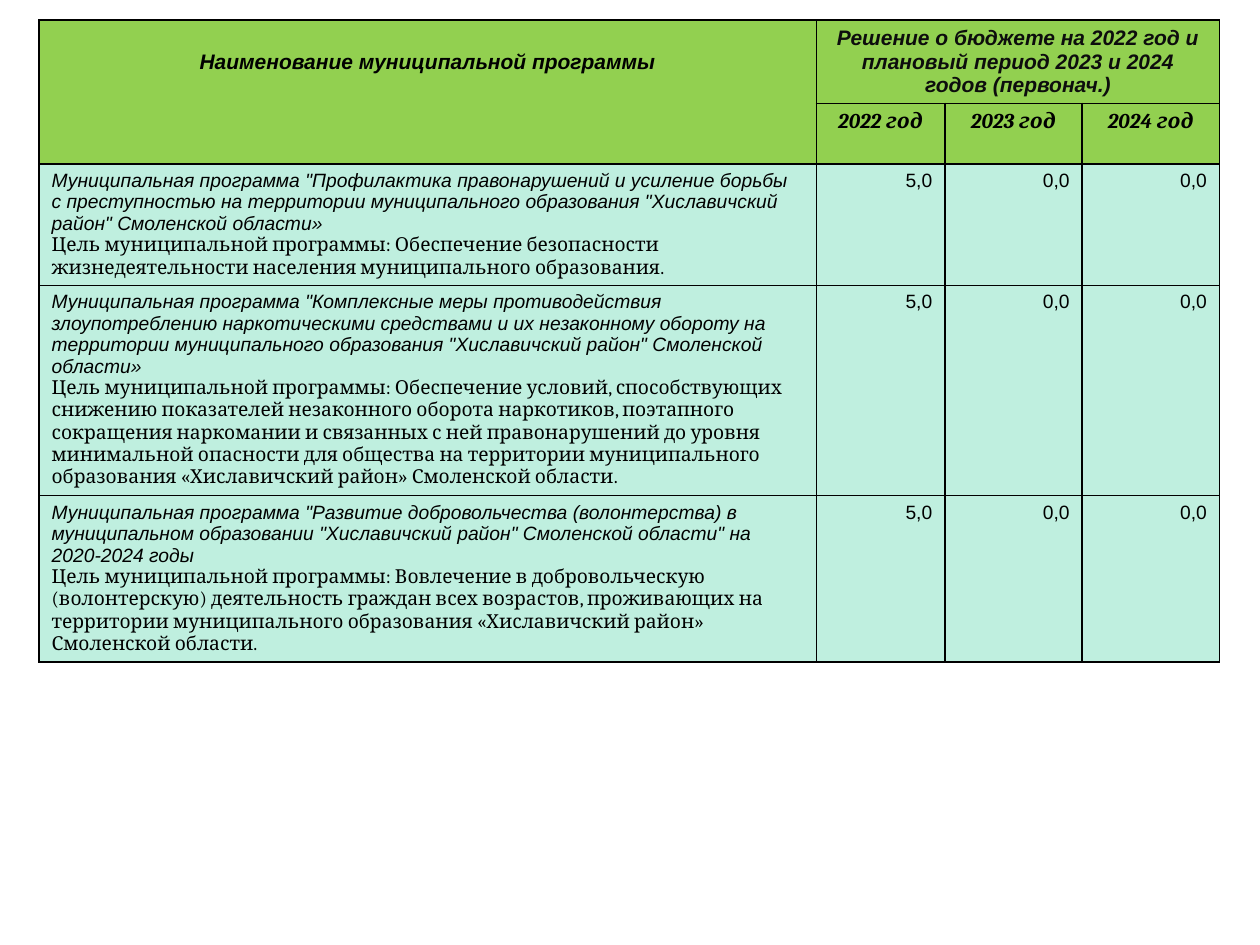
import pptx
import pptx.util
import pptx.dml.color
import pptx.enum.text
import pptx.oxml.ns
import lxml.etree

BLACK = pptx.dml.color.RGBColor(0x00, 0x00, 0x00)
DARK = pptx.dml.color.RGBColor(0x0D, 0x0D, 0x0D)
GREEN = pptx.dml.color.RGBColor(0x92, 0xD0, 0x50)
MINT = pptx.dml.color.RGBColor(0xBF, 0xEF, 0xDF)

ALIGN = pptx.enum.text.PP_ALIGN
COLUMNS = [6.17, 1.02, 1.09, 1.09]
ROWS = [0.66, 0.48, 0.96, 1.67, 1.32]
YEARS = ["2022 год", "2023 год", "2024 год"]
AMOUNTS = ["5,0", "0,0", "0,0"]

HEAD = {"name": "Arial", "size": pptx.util.Pt(12), "bold": True, "italic": True}
YEAR = {**HEAD, "name": "Cambria"}
AMOUNT = {"name": "Arial", "size": pptx.util.Pt(11), "bold": False, "italic": False}
NAME = {**AMOUNT, "italic": True}
GOAL = {**AMOUNT, "name": "Cambria"}

PROGRAMS = [
    ("Муниципальная программа \"Профилактика правонарушений и усиление борьбы с "
     "преступностью на территории муниципального образования \"Хиславичский район\" "
     "Смоленской области»",
     "Цель муниципальной программы: Обеспечение безопасности жизнедеятельности "
     "населения муниципального образования."),
    ("Муниципальная программа \"Комплексные меры противодействия злоупотреблению "
     "наркотическими средствами и их незаконному обороту на территории муниципального "
     "образования \"Хиславичский район\" Смоленской области»",
     "Цель муниципальной программы: Обеспечение условий, способствующих снижению "
     "показателей незаконного оборота наркотиков, поэтапного сокращения наркомании и "
     "связанных с ней правонарушений до уровня минимальной опасности для общества на "
     "территории муниципального образования «Хиславичский район» Смоленской области."),
    ("Муниципальная программа \"Развитие добровольчества (волонтерства) в муниципальном "
     "образовании \"Хиславичский район\" Смоленской области\" на 2020-2024 годы",
     "Цель муниципальной программы: Вовлечение в добровольческую (волонтерскую) "
     "деятельность граждан всех возрастов, проживающих на территории муниципального "
     "образования «Хиславичский район» Смоленской области."),
]


def add_table(s, left, top):
    frame = s.shapes.add_table(
        len(ROWS), len(COLUMNS), pptx.util.Inches(left), pptx.util.Inches(top),
        pptx.util.Inches(sum(COLUMNS)), pptx.util.Inches(sum(ROWS)))
    table = frame.table
    for column, width in zip(table.columns, COLUMNS):
        column.width = pptx.util.Inches(width)
    for row, height in zip(table.rows, ROWS):
        row.height = pptx.util.Inches(height)
    return table


def style_cell(cell, color):
    qn = pptx.oxml.ns.qn
    tcPr = cell._tc.get_or_add_tcPr()
    for side in ("a:lnL", "a:lnR", "a:lnT", "a:lnB"):
        ln = lxml.etree.SubElement(tcPr, qn(side), w=str(pptx.util.Pt(1)))
        fill = lxml.etree.SubElement(ln, qn("a:solidFill"))
        lxml.etree.SubElement(fill, qn("a:srgbClr"), val=str(BLACK))
    cell.fill.solid()
    cell.fill.fore_color.rgb = color


def write_cell(cell, parts, align, color=BLACK):
    tf = cell.text_frame
    for i, (text, style) in enumerate(parts):
        p = tf.add_paragraph() if i else tf.paragraphs[0]
        p.alignment = align
        r = p.add_run()
        r.text = text
        for key, value in style.items():
            setattr(r.font, key, value)
        r.font.color.rgb = color


def fill_header(table):
    title, decision = table.cell(0, 0), table.cell(0, 1)
    title.merge(table.cell(1, 0))
    decision.merge(table.cell(0, 3))
    title.margin_top = pptx.util.Inches(0.24)
    write_cell(title, [("Наименование муниципальной программы", HEAD)], ALIGN.CENTER)
    write_cell(decision, [("Решение о бюджете на 2022 год и плановый период "
                           "2023 и 2024 годов (первонач.)", HEAD)], ALIGN.CENTER, DARK)
    for col, year in enumerate(YEARS, 1):
        write_cell(table.cell(1, col), [(year, YEAR)], ALIGN.CENTER)


def fill_programs(table):
    for row, (name, goal) in enumerate(PROGRAMS, 2):
        write_cell(table.cell(row, 0), [(name, NAME), (goal, GOAL)], ALIGN.LEFT)
        for col, amount in enumerate(AMOUNTS, 1):
            write_cell(table.cell(row, col), [(amount, AMOUNT)], ALIGN.RIGHT)


def main():
    prs = pptx.Presentation()
    prs.slide_width = pptx.util.Inches(10)
    prs.slide_height = pptx.util.Inches(7.5)
    s = prs.slides.add_slide(prs.slide_layouts[6])
    table = add_table(s, 0.31, 0.16)
    for row in range(len(ROWS)):
        for col in range(len(COLUMNS)):
            style_cell(table.cell(row, col), GREEN if row < 2 else MINT)
    fill_header(table)
    fill_programs(table)
    prs.save("out.pptx")


if __name__ == "__main__":
    main()
